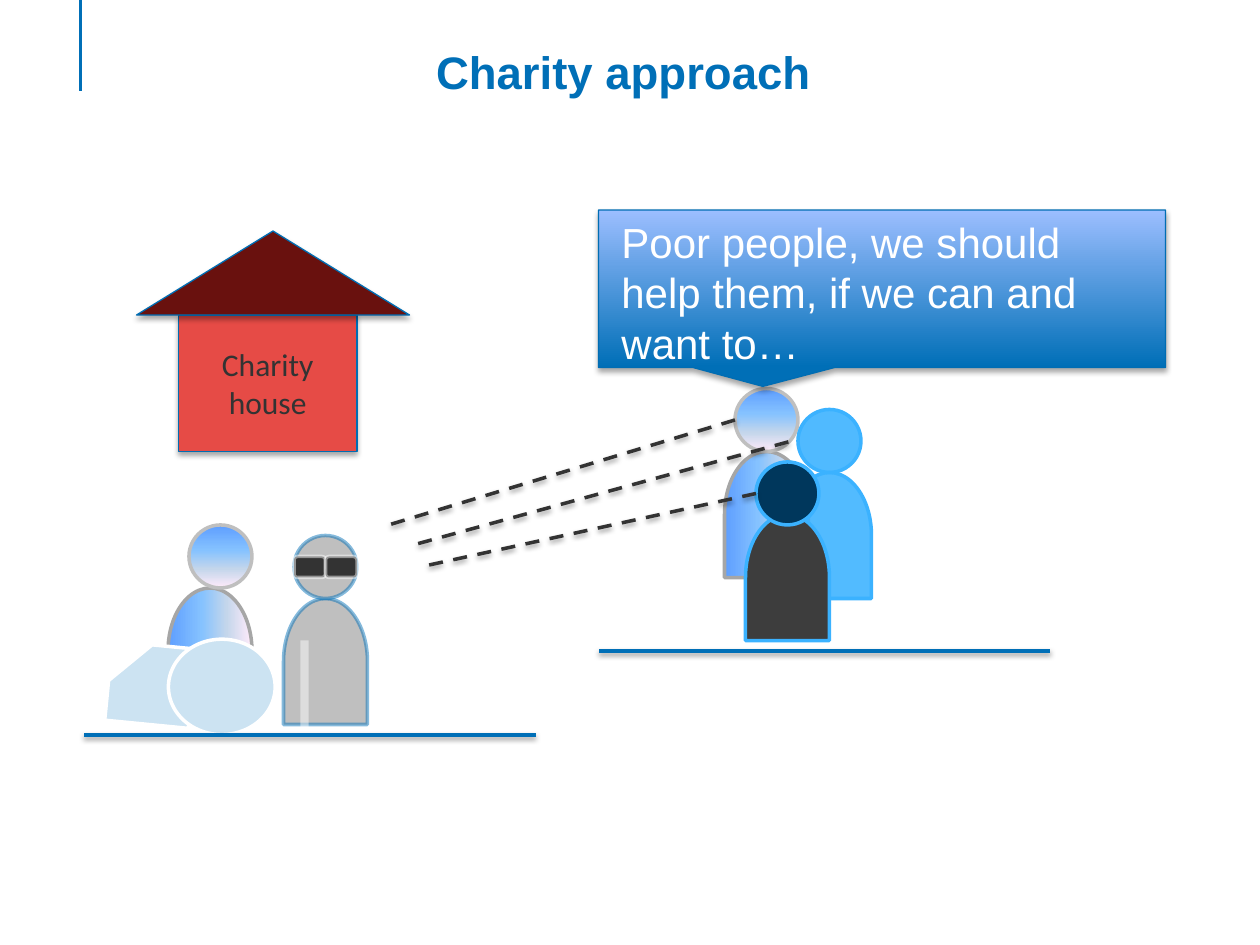
"""Build the "Charity approach" slide with its house, people and speech callout."""
from dataclasses import dataclass
from typing import Optional, Union

from lxml import etree
from pptx import Presentation
from pptx.dml.color import RGBColor
from pptx.enum import dml, shapes, text
from pptx.oxml import ns
from pptx.util import Pt

BLUE = RGBColor(0x00, 0x6F, 0xB7)
EDGE = RGBColor(0x00, 0x6D, 0xB3)
SKY = RGBColor(0x3B, 0xB2, 0xFF)
NAVY = RGBColor(0x00, 0x37, 0x5C)
PALE = RGBColor(0xCC, 0xE3, 0xF2)
WHITE = RGBColor(0xFF, 0xFF, 0xFF)
BLACK = RGBColor(0x00, 0x00, 0x00)
CHARCOAL = RGBColor(0x3D, 0x3D, 0x3D)
INK = RGBColor(0x33, 0x33, 0x33)
GREY = RGBColor(0xBF, 0xBF, 0xBF)
DARK_GREY = RGBColor(0xA6, 0xA6, 0xA6)
WALL = RGBColor(0xE6, 0x4B, 0x46)
ROOF = RGBColor(0x69, 0x11, 0x0E)

SHAPE = shapes.MSO_SHAPE
HEAD_SIZE, BODY_LENGTH, BODY_WIDTH = 36, 72, 48


@dataclass(frozen=True)
class Gradient:
    stops: tuple
    angle: int


@dataclass(frozen=True)
class Outline:
    color: RGBColor
    width: float = 2
    alpha: int = 100
    dashed: bool = False


@dataclass(frozen=True)
class Shadow:
    alpha: int
    blur: float
    distance: float


@dataclass(frozen=True)
class Person:
    body: tuple
    head: tuple
    body_fill: Union[RGBColor, Gradient]
    head_fill: Union[RGBColor, Gradient]
    body_line: Outline
    head_line: Outline
    body_alpha: int = 100
    head_alpha: int = 100


SKIN = Gradient(((0, RGBColor(0x5E, 0x9E, 0xFF)), (40, RGBColor(0x85, 0xC2, 0xFF)),
                 (70, RGBColor(0xC4, 0xD6, 0xEB)), (100, RGBColor(0xFF, 0xEB, 0xFA))), 90)
CALLOUT = Gradient(((0, BLUE), (100, RGBColor(0x9C, 0xBE, 0xFF))), 270)
THIN, SKY_LINE, WHITE_LINE = Outline(EDGE, 0.75), Outline(SKY), Outline(WHITE)
FADED_BLUE, FADED_WHITE = Outline(BLUE, alpha=47), Outline(WHITE, alpha=47)
SOFT, LINE_SHADOW = Shadow(35, 3.1, 1.8), Shadow(38, 3.1, 1.6)

HELPERS = (
    Person((402, 270), (420, 222), SKIN, SKIN, Outline(DARK_GREY), Outline(GREY)),
    Person((438, 282), (456, 234), SKY, SKY, SKY_LINE, SKY_LINE, 88, 89),
    Person((414, 306), (432, 264), CHARCOAL, NAVY, SKY_LINE, SKY_LINE),
)
SEATED = Person((84, 348), (108, 300), SKIN, SKIN, Outline(DARK_GREY), Outline(GREY))
BLIND = Person((150, 354), (168, 306), GREY, GREY, FADED_BLUE, FADED_BLUE)
SIGHT_LINES = (((420, 240), (222, 300)), ((450.5, 252.5), (234, 312)), ((432, 282), (240, 324)))
GROUND_LINES = (((600, 372), (342, 372)), ((306, 420), (48, 420)))


def add_element(parent, tag: str, **attributes):
    element = etree.SubElement(parent, ns.qn(tag))
    for name, value in attributes.items():
        element.set(name, str(value))
    return element


def add_color(parent, color: RGBColor, alpha: int = 100) -> None:
    element = add_element(parent, "a:srgbClr", val=color)
    if alpha < 100:
        add_element(element, "a:alpha", val=alpha * 1000)


def set_alpha(holder, alpha: int) -> None:
    if alpha < 100:
        color = next(holder.iter(ns.qn("a:srgbClr")))
        add_element(color, "a:alpha", val=alpha * 1000)


def set_fill(shape, fill: Union[RGBColor, Gradient], alpha: int) -> None:
    if isinstance(fill, RGBColor):
        shape.fill.solid()
        shape.fill.fore_color.rgb = fill
        set_alpha(shape.element.spPr, alpha)
        return
    properties = shape.element.spPr
    gradient = add_element(properties, "a:gradFill", rotWithShape=1)
    stops = add_element(gradient, "a:gsLst")
    for position, color in fill.stops:
        add_color(add_element(stops, "a:gs", pos=position * 1000), color)
    add_element(gradient, "a:lin", ang=fill.angle * 60000, scaled=0)
    properties.find(ns.qn("a:prstGeom")).addnext(gradient)


def set_line(shape, outline: Outline) -> None:
    shape.line.color.rgb = outline.color
    shape.line.width = Pt(outline.width)
    if outline.dashed:
        shape.line.dash_style = dml.MSO_LINE.DASH
    set_alpha(shape.element.spPr.find(ns.qn("a:ln")), outline.alpha)


def set_shadow(shape, shadow: Optional[Shadow]) -> None:
    effects = add_element(shape.element.spPr, "a:effectLst")
    if shadow:
        outer = add_element(effects, "a:outerShdw", blurRad=Pt(shadow.blur),
                            dist=Pt(shadow.distance), dir=90 * 60000, rotWithShape=0)
        add_color(outer, BLACK, shadow.alpha)


def add_shape(page, kind, place: tuple, fill: Union[RGBColor, Gradient], outline: Outline,
              alpha: int = 100, rotation: float = 0, shadow: Optional[Shadow] = None):
    shape = page.shapes.add_shape(kind, *map(Pt, place))
    shape.rotation = rotation
    set_fill(shape, fill, alpha)
    set_line(shape, outline)
    set_shadow(shape, shadow)
    return shape


def add_line(page, start: tuple, end: tuple, outline: Outline,
             shadow: Optional[Shadow] = None) -> None:
    line = page.shapes.add_connector(shapes.MSO_CONNECTOR.STRAIGHT, *map(Pt, start + end))
    set_line(line, outline)
    set_shadow(line, shadow)


def add_person(page, person: Person) -> None:
    add_shape(page, SHAPE.FLOWCHART_DELAY, person.body + (BODY_LENGTH, BODY_WIDTH),
              person.body_fill, person.body_line, person.body_alpha, rotation=270)
    add_shape(page, SHAPE.FLOWCHART_CONNECTOR, person.head + (HEAD_SIZE, HEAD_SIZE),
              person.head_fill, person.head_line, person.head_alpha)


def write(shape, words: str, font: str, size: float, color: RGBColor,
          align, anchor, bold: bool = False) -> None:
    frame = shape.text_frame
    frame.text = words
    frame.word_wrap = True
    frame.vertical_anchor = anchor
    para = frame.paragraphs[0]
    para.alignment = align
    for span in para.runs:
        span.font.name, span.font.size, span.font.bold = font, Pt(size), bold
        span.font.color.rgb = color


def main() -> None:
    deck = Presentation()
    deck.slide_width, deck.slide_height = Pt(720), Pt(540)
    page = deck.slides.add_slide(deck.slide_layouts[5])
    center, top = text.PP_ALIGN.CENTER, text.MSO_ANCHOR.TOP

    add_line(page, (46, 0), (46, 52), Outline(BLUE))
    title = page.shapes.title
    title.left, title.top, title.width, title.height = map(Pt, (58.5, 21.5, 595.5, 85.5))
    write(title, "Charity approach", "Arial", 26, BLUE, center, top, bold=True)

    for person in HELPERS:
        add_person(page, person)

    add_person(page, SEATED)
    legs = add_shape(page, SHAPE.SNIP_1_RECTANGLE, (62, 368.5, 48, 45.5), PALE, WHITE_LINE,
                     rotation=5.6)
    legs.adjustments[0] = 0.5
    legs.element.spPr.find(ns.qn("a:xfrm")).set("flipH", "1")
    add_shape(page, SHAPE.FLOWCHART_CONNECTOR, (99.5, 362, 54.5, 61), PALE, WHITE_LINE,
              rotation=90)

    add_person(page, BLIND)
    add_line(page, (174, 366), (174, 420), Outline(WHITE, 4.75, 47))
    for left in (168, 186):
        add_shape(page, SHAPE.FLOWCHART_ALTERNATE_PROCESS, (left, 318, 18, 12), INK, FADED_WHITE)

    callout = add_shape(page, SHAPE.RECTANGULAR_CALLOUT, (342, 120, 324, 90), CALLOUT, THIN,
                        shadow=SOFT)
    callout.adjustments[0], callout.adjustments[1] = -0.21, 0.62
    box = page.shapes.add_textbox(*map(Pt, (348, 120, 312, 65.5)))
    write(box, "Poor people, we should help them, if we can and want to…", "Arial", 24,
          WHITE, text.PP_ALIGN.LEFT, top)

    for start, end in SIGHT_LINES:
        add_line(page, start, end, Outline(INK, dashed=True), LINE_SHADOW)
    for start, end in GROUND_LINES:
        add_line(page, start, end, Outline(BLUE), LINE_SHADOW)

    house = add_shape(page, SHAPE.RECTANGLE, (102, 180, 102, 78), WALL, THIN, shadow=SOFT)
    write(house, "Charity house", "Calibri", 18, INK, center, text.MSO_ANCHOR.MIDDLE)
    add_shape(page, SHAPE.ISOSCELES_TRIANGLE, (78, 132, 156, 48), ROOF, THIN, shadow=SOFT)

    deck.save("out.pptx")


if __name__ == "__main__":
    main()
